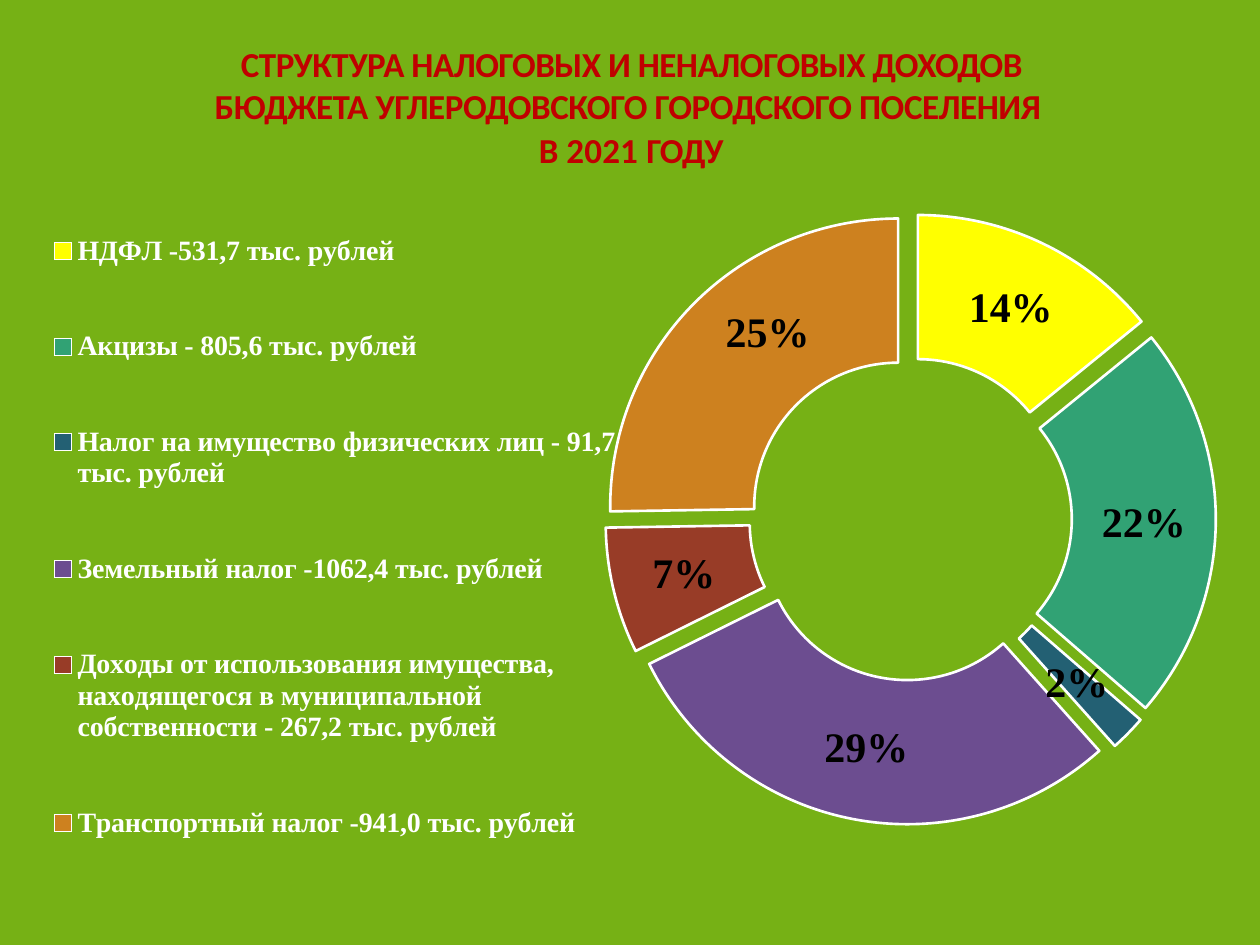
from pptx import Presentation
from pptx import util as u
from pptx.chart import data
from pptx.dml.color import RGBColor
from pptx.enum import chart as ch, shapes, text
from pptx.oxml import ns, parse_xml

THEME = {
    "back": "76B115", "title": "C00000", "light": "FFFFFF", "dark": "000000",
    "head": "Calibri", "base": "League Spartan", "serif": "Times New Roman",
    "head_pt": 20, "base_pt": 10, "key_pt": 16, "mark_pt": 24,
}
TITLE = [
    [("СТРУКТУРА НАЛОГОВЫХ И НЕНАЛОГОВЫХ ДОХОДОВ ", -30),
     ("БЮДЖЕТА УГЛЕРОДОВСКОГО ГОРОДСКОГО ПОСЕЛЕНИЯ ", -25)],
    [("В ", 0), ("2021 ", 10), ("ГОДУ", -40)],
]
PARTS = [
    ("НДФЛ -531,7 тыс. рублей", 14, "FFFF00"),
    ("Акцизы - 805,6 тыс. рублей", 22, "31A274"),
    ("Налог на имущество физических лиц - 91,7 тыс. рублей", 2, "236073"),
    ("Земельный налог -1062,4 тыс. рублей", 29, "6C4D90"),
    ("Доходы от использования имущества, находящегося в муниципальной "
     "собственности - 267,2 тыс. рублей", 7, "983C27"),
    ("Транспортный налог -941,0 тыс. рублей", 25, "CD811F"),
]
PLOT = (0.48, 0.03, 0.52, 0.89)
KEY = (0.01, 0, 0.48, 1)
SHIFT = (0.02, -0.03)
HOLE, BURST = 61, 12


def rgb(name):
    """Return a theme colour or a hex colour."""
    return RGBColor.from_string(THEME.get(name, name))


def style(font, face, size, color, bold=True):
    """Set face, size, colour and weight of a font."""
    font.name, font.size, font.bold = THEME[face], u.Pt(THEME[size]), bold
    font.color.rgb = rgb(color)


def node(tag, body="", attrs=""):
    """Build one chart element."""
    return parse_xml(f"<c:{tag} {ns.nsdecls('c')} {attrs}>{body}</c:{tag}>")


def place(owner, index, box, lead='<c:xMode val="edge"/><c:yMode val="edge"/>'):
    """Give a chart part a manual layout in fractions of the chart."""
    for old in owner.findall(ns.qn("c:layout")):
        owner.remove(old)
    body = lead + "".join(f'<c:{k} val="{v}"/>' for k, v in zip("xywh", box))
    owner.insert(index, node("layout", f"<c:manualLayout>{body}</c:manualLayout>"))


def add_back(slide, deck):
    """Cover the slide with the plain background."""
    back = slide.shapes.add_shape(shapes.MSO_SHAPE.RECTANGLE, 0, 0,
                                  deck.slide_width, deck.slide_height)
    back.shadow.inherit = False
    back.fill.solid()
    back.fill.fore_color.rgb = rgb("back")
    back.line.fill.background()


def add_title(slide):
    """Write the centred heading."""
    box = slide.shapes.add_textbox(*map(u.Inches, (1.37, 0.33, 7.27, 1.04)))
    frame = box.text_frame
    frame.word_wrap = True
    frame.margin_right = frame.margin_bottom = 0
    frame.margin_left = frame.margin_top = u.Inches(0.01)
    for i, runs in enumerate(TITLE):
        para = frame.add_paragraph() if i else frame.paragraphs[0]
        para.alignment = text.PP_ALIGN.CENTER
        para.space_before = u.Pt(1 if i else 0)
        style(para.font, "head", "head_pt", "title")
        for words, gap in runs:
            run = para.add_run()
            run.text = words
            run.font.size, run.font.bold = para.font.size, True
            run.font._element.set("spc", str(gap))


def add_ring(slide):
    """Draw the ring chart with its key."""
    names, vals, fills = zip(*PARTS)
    info = data.CategoryChartData()
    info.categories = names
    info.add_series("Series 1", vals)
    chart = slide.shapes.add_chart(
        ch.XL_CHART_TYPE.DOUGHNUT,
        *map(u.Inches, (0.33, 1.36, 9.33, 5.81)), info).chart
    chart.has_title = False
    style(chart.font, "base", "base_pt", "light", False)

    chart.has_legend = True
    key = chart.legend
    key.position = ch.XL_LEGEND_POSITION.BOTTOM
    key.include_in_layout = False
    style(key.font, "serif", "key_pt", "light")
    place(key._element, 1, KEY)

    plot = chart.plots[0]
    place(plot._element.getparent(), 0, PLOT,
          '<c:layoutTarget val="inner"/><c:xMode val="edge"/><c:yMode val="edge"/>')
    plot._element.find(ns.qn("c:holeSize")).set("val", str(HOLE))
    ring = plot.series[0]
    ring.format.line.color.rgb = rgb("light")
    ring._element.find(ns.qn("c:spPr")).addnext(
        node("explosion", attrs=f'val="{BURST}"'))
    for i, fill in enumerate(fills):
        look = ring.points[i].format
        look.fill.solid()
        look.fill.fore_color.rgb = rgb(fill)
        look.line.color.rgb = rgb("light")
        look.line.width = u.Pt(1.5)

    marks = ring.data_labels
    marks.show_percentage, marks.show_value = True, False
    marks.number_format, marks.number_format_is_linked = "0%", False
    style(marks.font, "serif", "mark_pt", "dark")
    last = len(PARTS) - 1
    style(ring.points[last].data_label.font, "serif", "mark_pt", "dark")
    mark = marks._element.find(ns.qn("c:dLbl"))
    place(mark, 1, SHIFT, "")
    for tag, on in (("showVal", 0), ("showCatName", 0), ("showPercent", 1)):
        mark.find(ns.qn(f"c:{tag}")).set("val", str(on))


def main():
    """Build and save the slide."""
    deck = Presentation()
    deck.slide_width, deck.slide_height = u.Inches(10), u.Inches(7.5)
    slide = deck.slides.add_slide(deck.slide_layouts[6])
    add_back(slide, deck)
    add_title(slide)
    add_ring(slide)
    deck.save("out.pptx")


if __name__ == "__main__":
    main()
